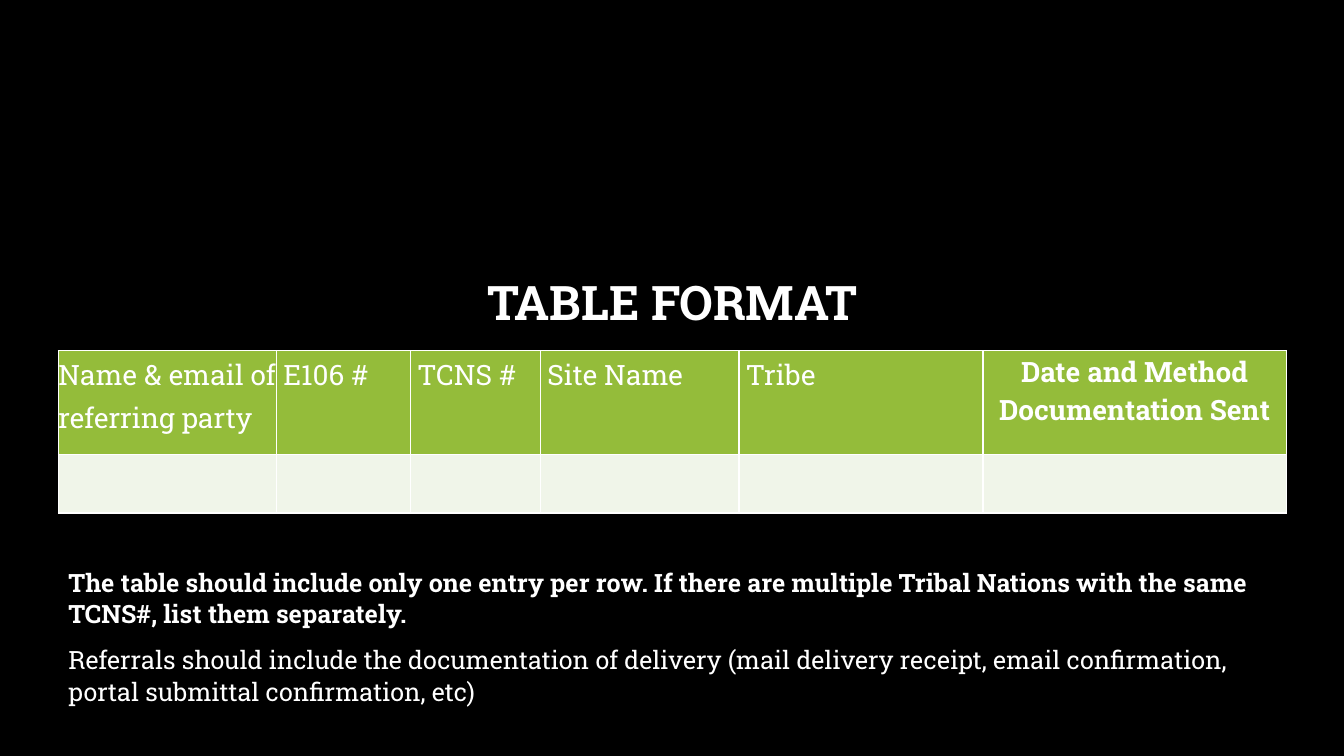
from pptx import Presentation
from pptx.dml.color import RGBColor
from pptx.enum.text import MSO_ANCHOR, PP_ALIGN
from pptx.oxml import parse_xml
from pptx.oxml.ns import nsdecls
from pptx.util import Inches, Pt

COLORS = {"bg": "000000", "text": "FFFFFF", "head": "94BC3A", "body": "F0F5E9"}
FONT = "Roboto Slab"
TITLE = "TABLE FORMAT"
HEADERS = ["Name & email of referring party", "E106 #", "TCNS #", "Site Name",
           "Tribe", "Date and Method Documentation Sent"]
COL_WIDTHS = [2.16, 1.33, 1.29, 1.97, 2.42, 3.01]
ROW_HEIGHTS = [1.03, 0.58]
SIDE_INSETS = [0, 0.07, 0.07, 0.07, 0.07, 0]
NOTES = [
    ("The table should include only one entry per row. If there are multiple "
     "Tribal Nations with the same TCNS#, list them separately.", True),
    ("Referrals should include the documentation of delivery (mail delivery receipt, "
     "email confirmation, portal submittal confirmation, etc)", False),
]
PLAIN_HEAD = {"line_spacing": 1.15, "space_after": Pt(10)}
BOLD_HEAD = {"line_spacing": 1.05, "alignment": PP_ALIGN.CENTER}
NOTE = {"line_spacing": 1.05, "space_after": Pt(10)}
TITLE_FORMAT = {"line_spacing": 0.9, "alignment": PP_ALIGN.CENTER}


def rgb(name):
    return RGBColor.from_string(COLORS[name])


def set_attrs(obj, values):
    for name, value in values.items():
        setattr(obj, name, value)


def write(p, text, size, bold, layout):
    set_attrs(p, layout)
    r = p.add_run()
    r.text = text
    set_attrs(r.font, {"name": FONT, "size": Pt(size), "bold": bold})
    r.font.color.rgb = rgb("text")


def add_text_box(s, box, anchor, paragraphs, size, layout):
    tf = s.shapes.add_textbox(*map(Inches, box)).text_frame
    set_attrs(tf, {"word_wrap": True, "vertical_anchor": anchor})
    for i, (text, bold) in enumerate(paragraphs):
        p = tf.add_paragraph() if i else tf.paragraphs[0]
        write(p, text, size, bold, layout)


def style_cell(cell, fill):
    tc_pr = cell._tc.get_or_add_tcPr()
    for side in ("lnL", "lnR", "lnT", "lnB"):
        tc_pr.append(parse_xml(
            f'<a:{side} {nsdecls("a")} w="{Pt(1)}"><a:solidFill>'
            f'<a:srgbClr val="{COLORS["text"]}"/></a:solidFill></a:{side}>'))
    cell.fill.solid()
    cell.fill.fore_color.rgb = rgb(fill)


def add_format_table(s):
    shape = s.shapes.add_table(
        len(ROW_HEIGHTS), len(HEADERS), Inches(0.58), Inches(3.48),
        Inches(sum(COL_WIDTHS)), Inches(sum(ROW_HEIGHTS)))
    table = shape.table
    for row, height in zip(table.rows, ROW_HEIGHTS):
        row.height = Inches(height)
    for i, (text, width, inset) in enumerate(zip(HEADERS, COL_WIDTHS, SIDE_INSETS)):
        table.columns[i].width = Inches(width)
        head = table.cell(0, i)
        set_attrs(head, {"margin_left": Inches(inset), "margin_right": Inches(inset),
                         "margin_top": 0, "margin_bottom": 0})
        last = i == len(HEADERS) - 1
        write(head.text_frame.paragraphs[0], text, 20, last,
              BOLD_HEAD if last else PLAIN_HEAD)
        style_cell(head, "head")
        style_cell(table.cell(1, i), "body")


def main():
    """Build the table format slide."""
    prs = Presentation()
    set_attrs(prs, {"slide_width": Inches(13.33), "slide_height": Inches(7.5)})
    s = prs.slides.add_slide(prs.slide_layouts[6])
    s.background.fill.solid()
    s.background.fill.fore_color.rgb = rgb("bg")
    add_text_box(s, (1.01, 2.3, 11.32, 1.45), MSO_ANCHOR.MIDDLE,
                 [(TITLE, True)], 34, TITLE_FORMAT)
    add_format_table(s)
    add_text_box(s, (0.58, 5.56, 12.11, 1.61), MSO_ANCHOR.TOP, NOTES, 18, NOTE)
    prs.save("out.pptx")


if __name__ == "__main__":
    main()
